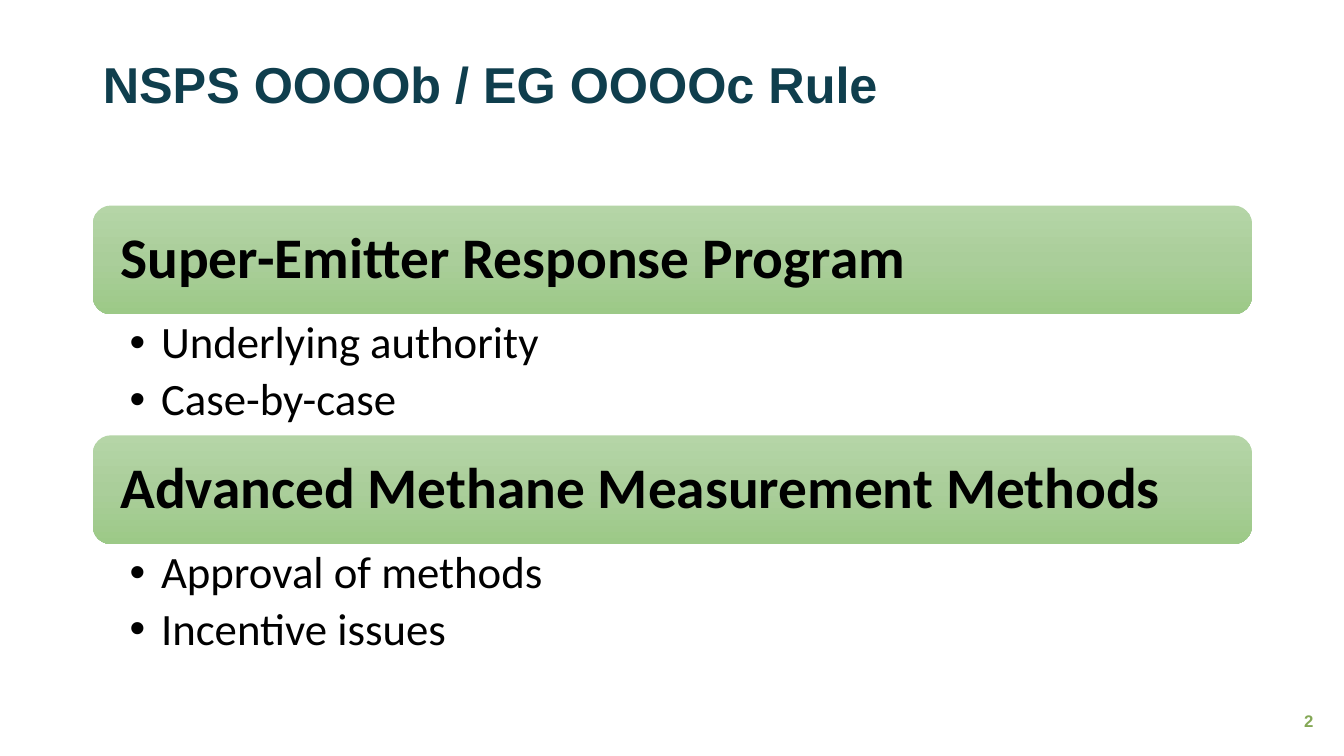
from copy import deepcopy

from lxml import etree
from pptx import Presentation
from pptx.dml.color import RGBColor
from pptx.enum.shapes import MSO_SHAPE as SHAPE
from pptx.enum.text import MSO_ANCHOR as ANCHOR, MSO_AUTO_SIZE as AUTO, PP_ALIGN as ALIGN
from pptx.oxml.ns import qn
from pptx.util import Cm, Pt

# Content
TITLE = "NSPS OOOOb / EG OOOOc Rule"
SECTIONS = [
    ("Super-Emitter Response Program", ["Underlying authority", "Case-by-case"]),
    ("Advanced Methane Measurement Methods", ["Approval of methods", "Incentive issues"]),
]
PAGE_NUMBER = "2"

# Style and layout, lengths in cm
BLACK, TEAL, GREEN = "000000", "0F3E4D", "84A856"
BAR_STOPS = [(0, "B5D5A7"), (0.5, "AACE9A"), (1, "9CC987")]
LEFT, WIDTH = 2.34, 29.21
TOP, BAR_H, LIST_H = 5.18, 2.74, 3.05
INDENT = 0.79


def color(hex_value):
    return RGBColor.from_string(hex_value)


def set_frame(tf, anchor, left=0.25, top=0.13, right=0.25, bottom=0.13):
    tf.word_wrap = True
    tf.auto_size = AUTO.NONE
    tf.vertical_anchor = anchor
    tf.margin_left, tf.margin_top = Cm(left), Cm(top)
    tf.margin_right, tf.margin_bottom = Cm(right), Cm(bottom)


def add_run(p, text, font, size, hex_value, bold=False, align=ALIGN.LEFT):
    p.alignment = align
    p.line_spacing = 0.9
    r = p.add_run()
    r.text = text
    r.font.name, r.font.size, r.font.bold = font, Pt(size), bold
    r.font.color.rgb = color(hex_value)


def add_bullet(p):
    pPr = p._p.get_or_add_pPr()
    pPr.set("marL", str(Cm(INDENT)))
    pPr.set("indent", str(-Cm(INDENT)))
    etree.SubElement(pPr, qn("a:buFont")).set("typeface", "Arial")
    etree.SubElement(pPr, qn("a:buChar")).set("char", "•")


def fill_gradient(fill, stops):
    fill.gradient()
    fill.gradient_angle = 270
    gs_list = fill._xPr.find(qn("a:gradFill")).find(qn("a:gsLst"))
    gs_list.insert(1, deepcopy(gs_list[0]))
    for stop, (position, hex_value) in zip(fill.gradient_stops, stops):
        stop.position = position
        stop.color.rgb = color(hex_value)


def add_bar(s, top, heading):
    sp = s.shapes.add_shape(SHAPE.ROUNDED_RECTANGLE, Cm(LEFT), Cm(top), Cm(WIDTH), Cm(BAR_H))
    sp.shadow.inherit = False
    sp.line.fill.background()
    fill_gradient(sp.fill, BAR_STOPS)
    set_frame(sp.text_frame, ANCHOR.MIDDLE, left=0.56, right=0.56)
    add_run(sp.text_frame.paragraphs[0], heading, "Calibri", 41, BLACK, bold=True)


def add_list(s, top, items):
    tf = s.shapes.add_textbox(Cm(LEFT), Cm(top), Cm(WIDTH), Cm(LIST_H)).text_frame
    set_frame(tf, ANCHOR.TOP, left=0.93, top=0.15, right=0.81, bottom=0.15)
    for i, item in enumerate(items):
        p = tf.add_paragraph() if i else tf.paragraphs[0]
        add_bullet(p)
        p.space_after = Pt(6)
        add_run(p, item, "Calibri", 32, BLACK)


def main():
    prs = Presentation()
    prs.slide_width, prs.slide_height = Cm(33.87), Cm(19.05)
    s = prs.slides.add_slide(prs.slide_layouts[5])

    # Title
    title = s.shapes.title
    title.left, title.top, title.width, title.height = Cm(LEFT), Cm(0.36), Cm(WIDTH), Cm(3.68)
    set_frame(title.text_frame, ANCHOR.MIDDLE)
    add_run(title.text_frame.paragraphs[0], TITLE, "Arial", 36, TEAL, bold=True)

    # Heading bars, each with its list below
    for i, (heading, items) in enumerate(SECTIONS):
        top = TOP + i * (BAR_H + LIST_H)
        add_bar(s, top, heading)
        add_list(s, top + BAR_H, items)

    # Page number
    tf = s.shapes.add_textbox(Cm(31.55), Cm(17.68), Cm(1.8), Cm(1.02)).text_frame
    set_frame(tf, ANCHOR.MIDDLE)
    add_run(tf.paragraphs[0], PAGE_NUMBER, "Arial", 12, GREEN, bold=True, align=ALIGN.RIGHT)

    prs.save("out.pptx")


if __name__ == "__main__":
    main()
